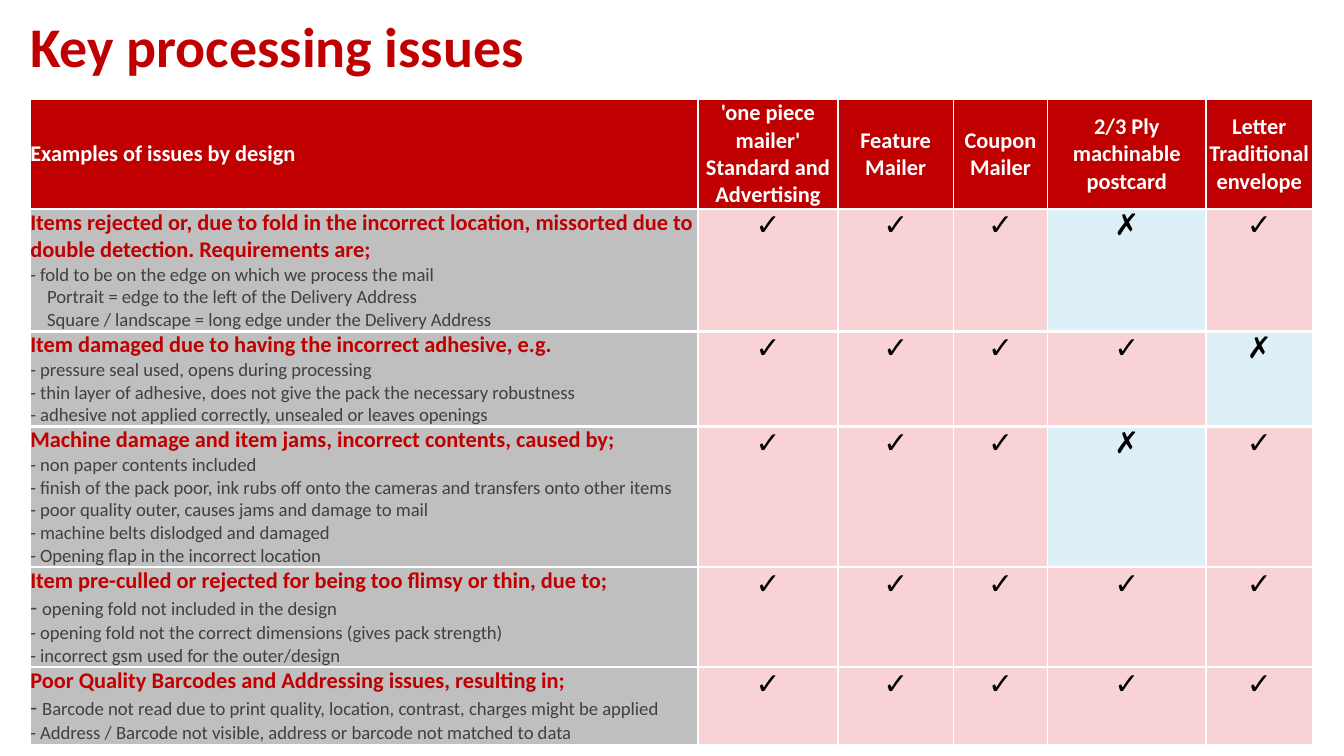
import pptx
import pptx.dml.color
import pptx.enum.text
import pptx.oxml
import pptx.oxml.ns
import pptx.util

Pt = pptx.util.Pt
ALIGN = pptx.enum.text.PP_ALIGN
ANCHOR = pptx.enum.text.MSO_ANCHOR

COLORS = {
    "red": "C00000",
    "white": "FFFFFF",
    "issue": "BFBFBF",
    "detail": "404040",
    "mark": "000000",
    "✓": "F8D2D4",
    "✗": "DDF0F7",
}

DESIGNS = ["'one piece mailer'\vStandard and Advertising", "Feature Mailer",
           "Coupon Mailer", "2/3 Ply machinable postcard",
           "Letter Traditional envelope"]
COLUMN_WIDTHS = [357.8, 74.9, 61.9, 50.4, 85, 56.9]
ROW_HEIGHTS = [25.2, 36.7, 27.4, 34.6, 30.2, 30.2]
LEFT = 16.2
INDENT = 9

# Heading, size of the first dash, details as (indent, text), marks per design
ISSUES = [
    ("Items rejected or, due to fold in the incorrect location, missorted "
     "due to double detection. Requirements are;", 10,
     [(0, "fold to be on the edge on which we process the mail"),
      (INDENT, "Portrait = edge to the left of the Delivery Address"),
      (INDENT, "Square / landscape = long edge under the Delivery Address")],
     "✓✓✓✗✓"),
    ("Item damaged due to having the incorrect adhesive, e.g.", 10,
     [(0, "pressure seal used, opens during processing"),
      (0, "thin layer of adhesive, does not give the pack the necessary robustness"),
      (0, "adhesive not applied correctly, unsealed or leaves openings")],
     "✓✓✓✓✗"),
    ("Machine damage and item jams, incorrect contents, caused by;", 10,
     [(0, "non paper contents included"),
      (0, "finish of the pack poor, ink rubs off onto the cameras and "
          "transfers onto other items"),
      (0, "poor quality outer, causes jams and damage to mail"),
      (0, "machine belts dislodged and damaged"),
      (0, "Opening flap in the incorrect location")],
     "✓✓✓✗✓"),
    ("Item pre-culled or rejected for being too flimsy or thin, due to;", 12,
     [(0, "opening fold not included in the design"),
      (0, "opening fold not the correct dimensions (gives pack strength)"),
      (0, "incorrect gsm used for the outer/design")],
     "✓✓✓✓✓"),
    ("Poor Quality Barcodes and Addressing issues, resulting in;", 12,
     [(0, "Barcode not read due to print quality, location, contrast, "
          "charges might be applied"),
      (0, "Address / Barcode not visible, address or barcode not matched to data")],
     "✓✓✓✓✓"),
]


class SlideBuilder:
    def __init__(self, slide):
        self.slide = slide
        self.font = "Calibri"
        self.mark_font = "Arial"

    def color(self, name):
        return pptx.dml.color.RGBColor.from_string(COLORS[name])

    def run(self, paragraph, text, size, color, bold=False, font=None):
        for index, line in enumerate(text.split("\v")):
            if index:
                paragraph.add_line_break()
            run = paragraph.add_run()
            run.text = line
            run.font.name = font or self.font
            run.font.size = Pt(size)
            run.font.bold = bold
            run.font.color.rgb = self.color(color)

    def title(self, text, left, top, width, height):
        title = self.slide.shapes.title
        title.left, title.top = Pt(left), Pt(top)
        title.width, title.height = Pt(width), Pt(height)
        frame = title.text_frame
        frame.margin_left = frame.margin_right = 0
        frame.margin_top = frame.margin_bottom = 0
        frame.auto_size = pptx.enum.text.MSO_AUTO_SIZE.NONE
        frame.vertical_anchor = ANCHOR.TOP
        paragraph = frame.paragraphs[0]
        paragraph.alignment = ALIGN.LEFT
        paragraph.line_spacing = 0.8
        self.run(paragraph, text, 30, "red", bold=True)

    def table(self, left, top, height, widths, heights):
        frame = self.slide.shapes.add_table(
            len(heights), len(widths), Pt(left), Pt(top),
            Pt(sum(widths)), Pt(height))
        for column, width in zip(frame.table.columns, widths):
            column.width = Pt(width)
        for row, row_height in zip(frame.table.rows, heights):
            row.height = Pt(row_height)
        frame.height = Pt(height)
        return frame.table

    def cell(self, cell, fill, top_line, bottom_line, anchor, align):
        """Style a cell and return its first paragraph."""
        cell.margin_left = cell.margin_right = 0
        cell.margin_top = cell.margin_bottom = 0
        cell.vertical_anchor = anchor
        properties = cell._tc.get_or_add_tcPr()
        lines = {"lnL": 1, "lnR": 1, "lnT": top_line, "lnB": bottom_line}
        for tag, width in lines.items():
            properties.append(pptx.oxml.parse_xml(
                f'<a:{tag} {pptx.oxml.ns.nsdecls("a")} w="{Pt(width)}">'
                f'<a:solidFill><a:srgbClr val="{COLORS["white"]}"/></a:solidFill>'
                f'</a:{tag}>'))
        cell.fill.solid()
        cell.fill.fore_color.rgb = self.color(fill)
        paragraph = cell.text_frame.paragraphs[0]
        paragraph.alignment = align
        return paragraph

    def issue(self, cell, paragraph, heading, dash_size, details):
        self.run(paragraph, heading, 12, "red", bold=True)
        for index, (indent, text) in enumerate(details):
            line = cell.text_frame.add_paragraph()
            line.alignment = ALIGN.LEFT
            if indent:
                line._p.get_or_add_pPr().set("marL", str(Pt(indent)))
            else:
                self.run(line, "- ", 10 if index else dash_size, "detail")
            self.run(line, text, 10, "detail")


def main():
    presentation = pptx.Presentation()
    presentation.slide_width = Pt(720)
    presentation.slide_height = Pt(405)
    builder = SlideBuilder(
        presentation.slides.add_slide(presentation.slide_layouts[5]))

    # Title
    builder.title("Key processing issues", LEFT, 13, 703.8, 35.3)

    # Table header
    table = builder.table(LEFT, 53.3, 342.7, COLUMN_WIDTHS, ROW_HEIGHTS)
    for column, label in enumerate(["Examples of issues by design"] + DESIGNS):
        align = ALIGN.CENTER if column else ALIGN.LEFT
        header = builder.cell(table.cell(0, column), "red", 1, 1.5,
                              ANCHOR.MIDDLE, align)
        builder.run(header, label, 12, "white", bold=True)

    # Issues and the designs they affect
    for row, (heading, dash_size, details, marks) in enumerate(ISSUES, 1):
        bottom_line = 1 if row == len(ISSUES) else 1.5
        issue_cell = table.cell(row, 0)
        paragraph = builder.cell(issue_cell, "issue", 1.5, bottom_line,
                                 ANCHOR.MIDDLE, ALIGN.LEFT)
        builder.issue(issue_cell, paragraph, heading, dash_size, details)
        for column, mark in enumerate(marks, 1):
            paragraph = builder.cell(table.cell(row, column), mark, 1.5,
                                     bottom_line, ANCHOR.TOP, ALIGN.CENTER)
            builder.run(paragraph, mark, 16, "mark", font=builder.mark_font)

    presentation.save("out.pptx")


if __name__ == "__main__":
    main()
